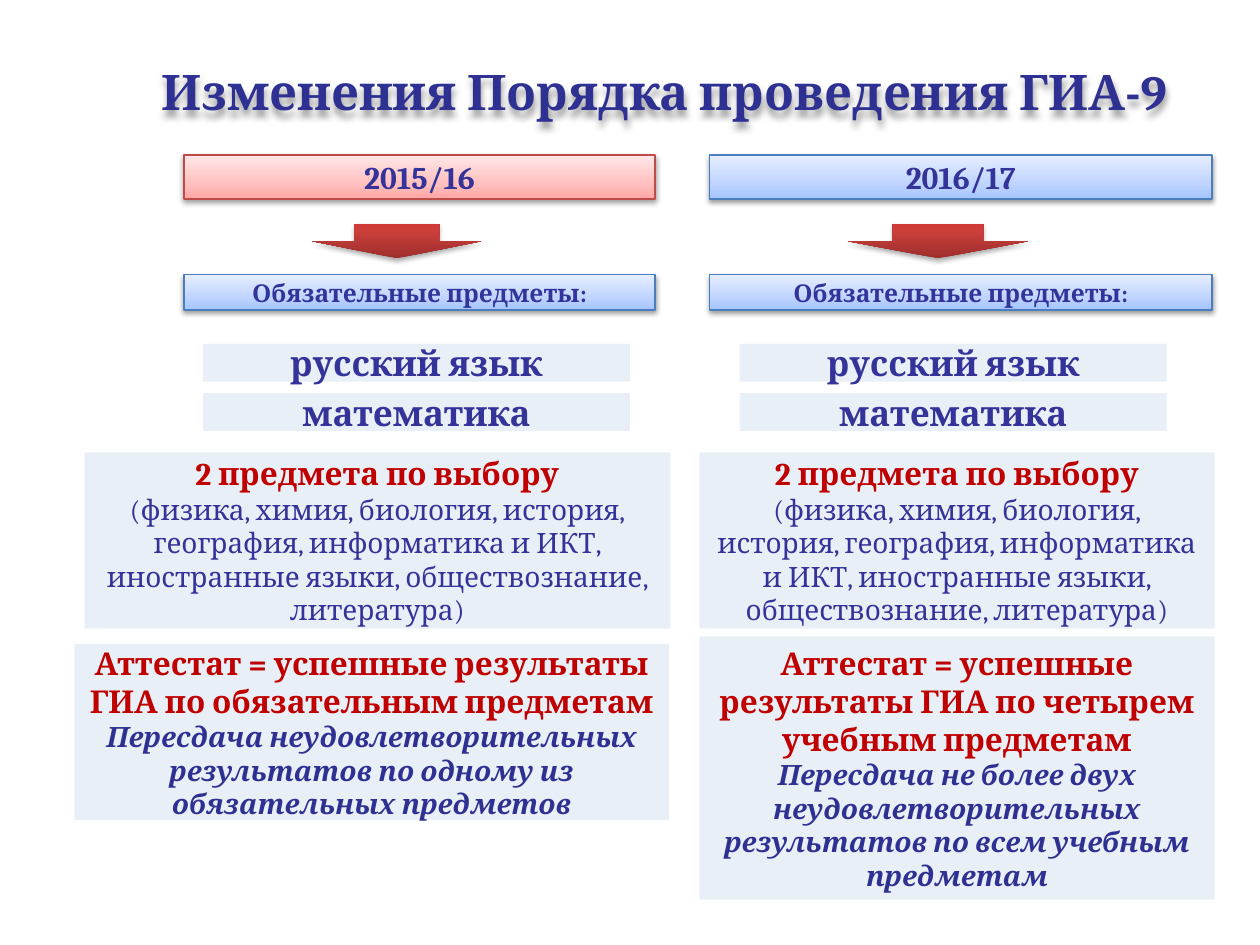
from lxml.etree import SubElement
from pptx import Presentation
from pptx.dml.color import RGBColor
from pptx.enum.shapes import MSO_SHAPE as Preset
from pptx.enum.text import MSO_ANCHOR as Anchor, PP_ALIGN as Align
from pptx.oxml.ns import qn
from pptx.util import Inches, Pt

BLUE, TITLE_BLUE, RED = "333399", "2E3192", "C00000"
BLUE_FADE = [(0, "A4C4FF"), (35, "BFD4FF"), (100, "E6EEFF")]
PINK_FADE = [(0, "FFA6A5"), (35, "FFC0BF"), (100, "FFE7E7")]
ARROW_FADE = [(0, "9C2F2D"), (80, "CB3E3A"), (100, "CE3B37")]
BLUE_EDGE, PINK_EDGE = "4B7EBC", "BF4C48"
ELECTIVES = ("(физика, химия, биология, история, география, информатика и ИКТ, "
             "иностранные языки, обществознание, литература)")


def color(code):
    return RGBColor.from_string(code)


class Board:
    font = "Cambria"
    columns, rows = 100, 75

    def __init__(self, deck):
        self.cell_width = deck.slide_width / self.columns
        self.cell_height = deck.slide_height / self.rows
        self.slide = deck.slides.add_slide(deck.slide_layouts[6])

    def place(self, left, top, width, height):
        return [round(n * cell) for n, cell in zip(
            (left, top, width, height), (self.cell_width, self.cell_height) * 2)]

    def letter(self, shape, paragraphs, anchor=Anchor.MIDDLE):
        frame = shape.text_frame
        frame.word_wrap = True
        frame.vertical_anchor = anchor
        for index, (words, look) in enumerate(paragraphs):
            line = frame.add_paragraph() if index else frame.paragraphs[0]
            line.alignment = Align.CENTER
            run = line.add_run()
            run.text = words
            size, code, *flags = look
            run.font.color.rgb = color(code)
            values = {"name": self.font, "size": Pt(size),
                      "bold": "b" in flags, "italic": "i" in flags}
            for key, value in values.items():
                setattr(run.font, key, value)

    def shade(self, shape, alpha, blur, distance):
        shape.shadow.inherit = False
        effects = shape._element.spPr.find(qn("a:effectLst"))
        shadow = SubElement(effects, qn("a:outerShdw"), blurRad=str(Pt(blur)),
                            dist=str(Pt(distance)), dir="5400000", rotWithShape="0")
        tint = SubElement(shadow, qn("a:srgbClr"), val="000000")
        SubElement(tint, qn("a:alpha"), val=str(alpha * 1000))

    def fade(self, shape, stops):
        shape.fill.gradient()
        shape.fill.gradient_angle = 90
        stop_list = shape._element.spPr.find(qn("a:gradFill")).find(qn("a:gsLst"))
        for old in list(stop_list):
            stop_list.remove(old)
        for position, code in stops:
            stop = SubElement(stop_list, qn("a:gs"), pos=str(position * 1000))
            SubElement(stop, qn("a:srgbClr"), val=code)

    def title(self, area, words):
        heading = self.slide.shapes.add_textbox(*self.place(*area))
        self.letter(heading, [(words, (28, TITLE_BLUE, "b"))], Anchor.TOP)
        self.shade(heading, 40, 4, 3)

    def bar(self, area, stops, edge, words, size):
        shape = self.slide.shapes.add_shape(Preset.RECTANGLE, *self.place(*area))
        self.fade(shape, stops)
        shape.line.color.rgb = color(edge)
        shape.line.width = Pt(0.75)
        self.shade(shape, 38, 3.1, 1.6)
        self.letter(shape, [(words, (size, BLUE, "b"))])

    def arrow(self, area):
        shape = self.slide.shapes.add_shape(Preset.DOWN_ARROW, *self.place(*area))
        self.fade(shape, ARROW_FADE)
        shape.line.fill.background()
        self.shade(shape, 35, 3.1, 1.8)

    def panel(self, area, paragraphs):
        shape = self.slide.shapes.add_shape(Preset.RECTANGLE, *self.place(*area))
        shape.shadow.inherit = False
        shape.fill.solid()
        shape.fill.fore_color.rgb = color("B9CDE5")
        tint = shape._element.spPr.find(qn("a:solidFill"))[0]
        SubElement(tint, qn("a:alpha"), val="31000")
        shape.line.fill.background()
        self.letter(shape, paragraphs)


YEARS = [
    {"year": "2015/16", "fade": PINK_FADE, "edge": PINK_EDGE,
     "bar": (14.6, 37.4), "arrow": (24.8, 13.4), "subject": 16.1,
     "choice": (6.7, 46.5), "certificate": (5.9, 51.1, 47.2, 14),
     "rule": "Аттестат = успешные результаты ГИА по обязательным предметам",
     "retake": "Пересдача неудовлетворительных результатов по одному из "
               "обязательных предметов"},
    {"year": "2016/17", "fade": BLUE_FADE, "edge": BLUE_EDGE,
     "bar": (56.3, 39.9), "arrow": (67.3, 14.3), "subject": 58.7,
     "choice": (55.5, 40.9), "certificate": (55.5, 50.5, 40.9, 20.9),
     "rule": "Аттестат = успешные результаты ГИА по четырем учебным предметам",
     "retake": "Пересдача не более двух неудовлетворительных результатов по всем "
               "учебным предметам"},
]


def main():
    deck = Presentation()
    deck.slide_width, deck.slide_height = Inches(10), Inches(7.5)
    board = Board(deck)
    board.title((5.1, 4.4, 95.2, 5.7), "Изменения Порядка проведения ГИА-9")
    for item in YEARS:
        left, width = item["bar"]
        board.bar((left, 12.3, width, 3.5), item["fade"], item["edge"], item["year"], 18)
        arrow_left, arrow_width = item["arrow"]
        board.arrow((arrow_left, 17.8, arrow_width, 2.7))
        board.bar((left, 21.8, width, 2.8), BLUE_FADE, BLUE_EDGE,
                  "Обязательные предметы:", 14)
        for row, subject in enumerate(("русский язык", "математика")):
            board.panel((item["subject"], 27.3 + 3.9 * row, 33.9, 3),
                        [(subject, (20, BLUE, "b"))])
        choice_left, choice_width = item["choice"]
        board.panel((choice_left, 35.9, choice_width, 14),
                    [("2 предмета по выбору", (18, RED, "b")),
                     (ELECTIVES, (16, BLUE))])
        board.panel(item["certificate"],
                    [(item["rule"], (18, RED, "b")),
                     (item["retake"], (16, TITLE_BLUE, "b", "i"))])
    deck.save("out.pptx")


if __name__ == "__main__":
    main()
